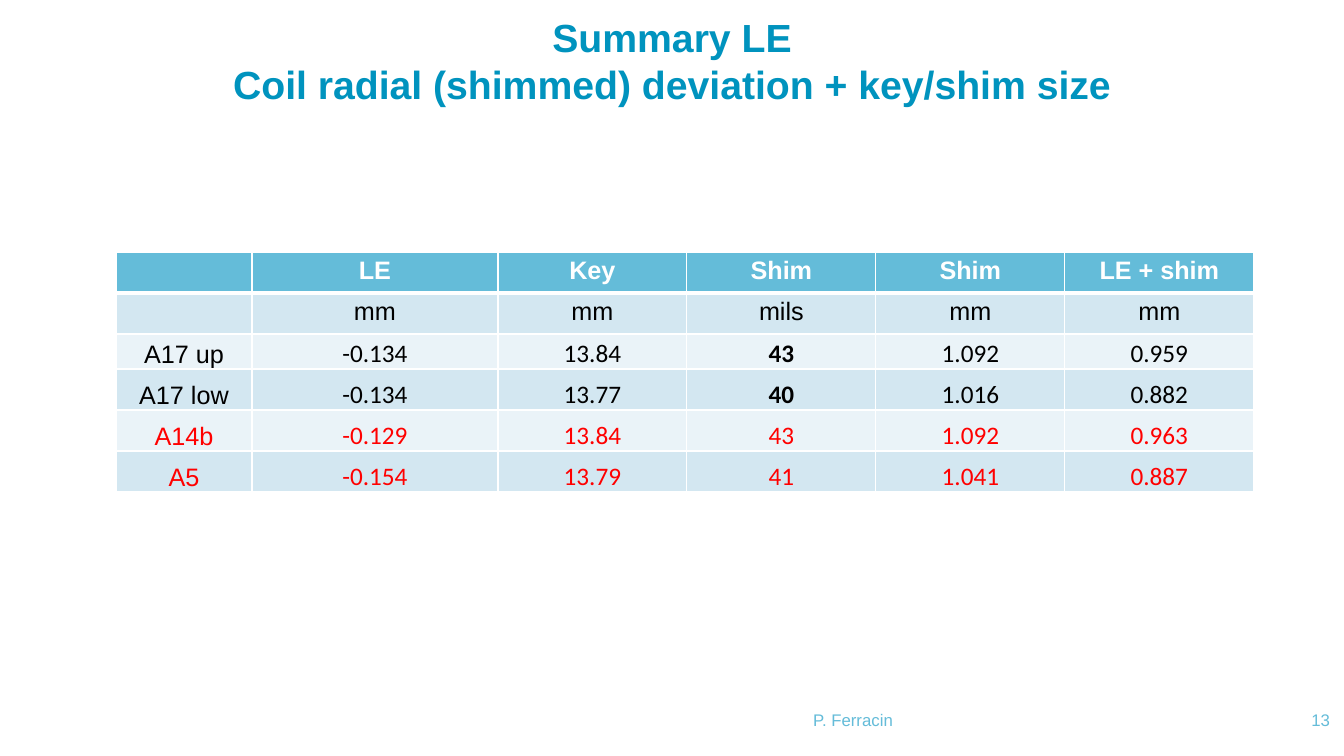
from lxml.etree import SubElement
from pptx import Presentation
from pptx.dml.color import RGBColor
from pptx.enum.text import MSO_ANCHOR, MSO_AUTO_SIZE, PP_ALIGN
from pptx.oxml.ns import qn
from pptx.util import Emu, Pt

TITLE = "Summary LE\vCoil radial (shimmed) deviation + key/shim size"
ROWS = [
    ("", "LE", "Key", "Shim", "Shim", "LE + shim"),
    ("", "mm", "mm", "mils", "mm", "mm"),
    ("A17 up", "-0.134", "13.84", "43", "1.092", "0.959"),
    ("A17 low", "-0.134", "13.77", "40", "1.016", "0.882"),
    ("A14b", "-0.129", "13.84", "43", "1.092", "0.963"),
    ("A5", "-0.154", "13.79", "41", "1.041", "0.887"),
]
FOOTER = [
    ("P. Ferracin", (452, 690, 802, 40), PP_ALIGN.CENTER),
    ("13", (1277, 690, 53, 40), PP_ALIGN.RIGHT),
]
WIDTHS = [136, 246] + [189] * 4
HEIGHTS = [41, 41, 35, 41, 41, 41]
LEFT, TOP = 116, 252
TEAL, SKY, WHITE, BLACK, RED = "0093BE", "64BCD9", "FFFFFF", "000000", "FF0000"
BANDS = ["EAF3F8", "D3E7F1"]
BOLD = {(2, 3), (3, 3)}


def px(n):
    return Emu(round(n * 914400 / 100.8))


def color(code):
    return RGBColor.from_string(code)


def style(frame, size, code, align, bold=False, face="Arial"):
    for para in frame.paragraphs:
        para.alignment = align
        for run in para.runs:
            font = run.font
            font.name, font.size, font.bold = face, Pt(size), bold
            font.color.rgb = color(code)


def place(shape, box, anchor):
    shape.left, shape.top, shape.width, shape.height = map(px, box)
    frame = shape.text_frame
    frame.word_wrap = True
    frame.auto_size = MSO_AUTO_SIZE.NONE
    frame.vertical_anchor = anchor
    frame.margin_left = frame.margin_right = 0
    frame.margin_top = frame.margin_bottom = 0
    return frame


def edge(cell, row):
    """White cell borders, thicker below the header."""
    props = cell._tc.get_or_add_tcPr()
    for side in "LRTB":
        thick = (row, side) in {(0, "B"), (1, "T")}
        line = SubElement(props, qn(f"a:ln{side}"), w=str(Pt(3 if thick else 1)))
        fill = SubElement(line, qn("a:solidFill"))
        SubElement(fill, qn("a:srgbClr"), val=WHITE)


def fill_cell(cell, row, col):
    edge(cell, row)
    cell.fill.solid()
    cell.fill.fore_color.rgb = color(BANDS[row % 2] if row else SKY)
    cell.text = ROWS[row][col]
    if row > 1:
        cell.vertical_anchor = MSO_ANCHOR.BOTTOM
        cell.margin_left = cell.margin_right = cell.margin_top = px(1)
        cell.margin_bottom = 0
    ink = WHITE if row == 0 else BLACK if row < 4 else RED
    face = "Calibri" if row > 1 and col else "Arial"
    bold = row == 0 or (row, col) in BOLD
    style(cell.text_frame, 18, ink, PP_ALIGN.CENTER, bold, face)


def main():
    deck = Presentation()
    deck.slide_width, deck.slide_height = px(1344), px(756)
    slide = deck.slides.add_slide(deck.slide_layouts[5])

    frame = place(slide.shapes.title, (90, 20, 1164, 80), MSO_ANCHOR.MIDDLE)
    frame.text = TITLE
    style(frame, 28, TEAL, PP_ALIGN.CENTER, True)

    for text, box, align in FOOTER:
        frame = place(slide.shapes.add_textbox(0, 0, 0, 0), box, MSO_ANCHOR.BOTTOM)
        frame.text = text
        style(frame, 12, SKY, align)

    size = map(px, (LEFT, TOP, sum(WIDTHS), sum(HEIGHTS)))
    table = slide.shapes.add_table(len(ROWS), len(WIDTHS), *size).table
    for column, width in zip(table.columns, WIDTHS):
        column.width = px(width)
    for row, height in enumerate(HEIGHTS):
        table.rows[row].height = px(height)
        for col in range(len(WIDTHS)):
            fill_cell(table.cell(row, col), row, col)

    deck.save("out.pptx")


if __name__ == "__main__":
    main()
